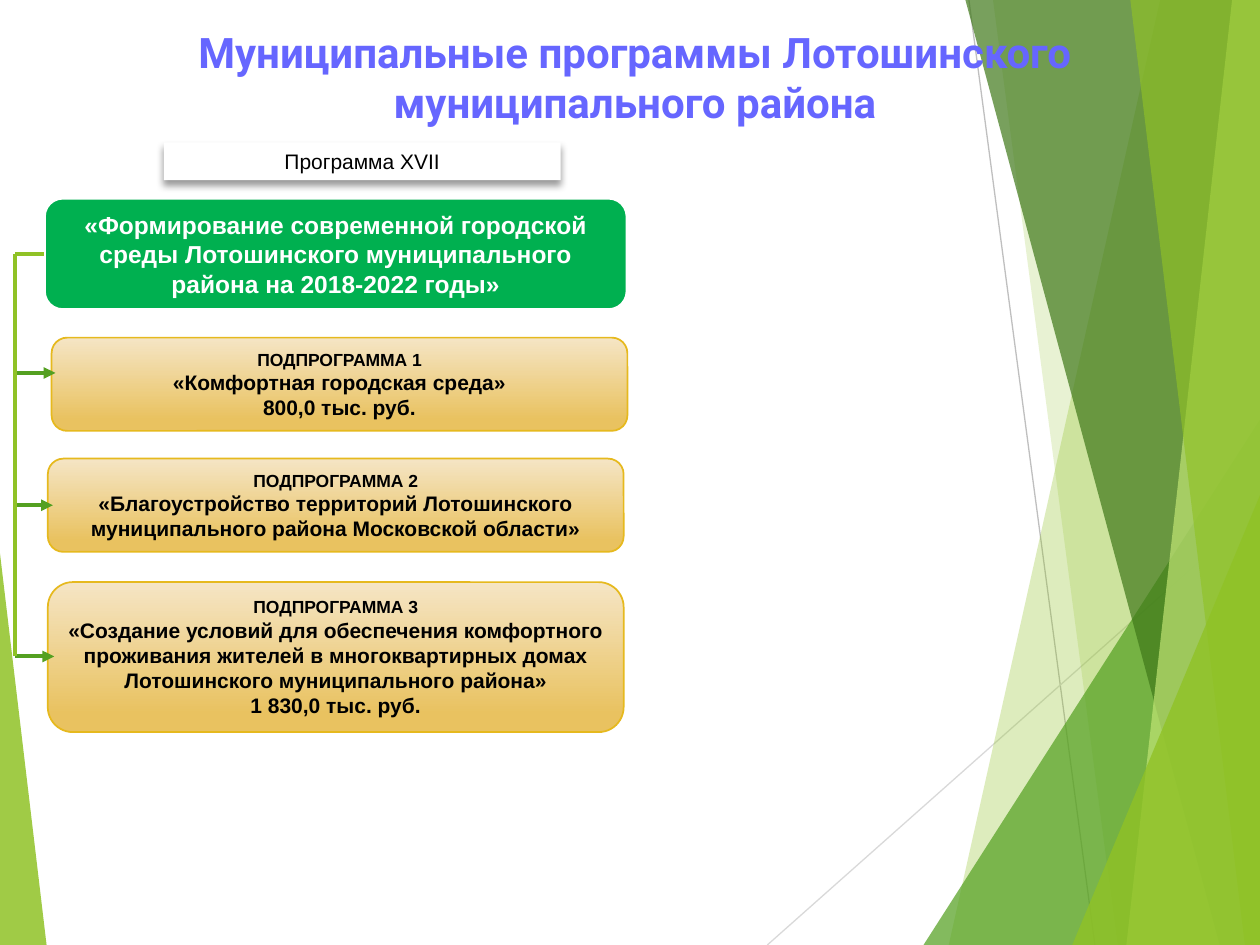
from dataclasses import dataclass
from lxml.etree import SubElement
from pptx import Presentation
from pptx.dml.color import RGBColor
from pptx.enum.shapes import MSO_CONNECTOR as Link, MSO_SHAPE as Shape
from pptx.enum.text import MSO_ANCHOR as Anchor, MSO_AUTO_SIZE as Fit, PP_ALIGN as Align
from pptx.oxml.ns import qn
from pptx.util import Inches, Pt


@dataclass(frozen=True)
class Theme:
    """Colours, fonts and type sizes of the slide."""
    lime: str = "90C226"
    green: str = "54A021"
    forest: str = "3F7819"
    pale: str = "C0E474"
    program: str = "00B050"
    gold: str = "E6B91E"
    sand: tuple = ((0, "F5E5C5"), (0.88, "E9C260"))
    title: str = "6666FF"
    white: str = "FFFFFF"
    black: str = "000000"
    title_font: str = "Roboto"
    body_font: str = "Arial"
    title_size: int = 24
    program_size: int = 14
    body_size: int = 12
    small_size: int = 10
    rule_width: float = 2.25


THEME = Theme()


def rgb(code):
    """Return the colour for a hex code."""
    return RGBColor.from_string(code)


def add_line(page, start, end, color, width, arrow=False):
    """Draw a straight line, with an optional arrowhead at its end."""
    line = page.shapes.add_connector(Link.STRAIGHT, *map(Inches, start + end))
    line.line.color.rgb = rgb(color)
    line.line.width = Pt(width)
    properties = line._element.spPr
    if arrow:
        SubElement(properties.find(qn("a:ln")), qn("a:tailEnd"), type="triangle")
    SubElement(properties, qn("a:effectLst"))
    return line


def paint(shape, color, opacity=100):
    """Give a shape a plain fill with no line or shadow."""
    shape.shadow.inherit = False
    shape.fill.solid()
    shape.fill.fore_color.rgb = rgb(color)
    shape.line.fill.background()
    if opacity < 100:
        tint = shape._element.spPr.find(qn("a:solidFill"))[0]
        SubElement(tint, qn("a:alpha"), val=str(opacity * 1000))


def write(shape, lines, font=THEME.body_font, color=THEME.black, bold=True, anchor=Anchor.MIDDLE):
    """Fill a shape with centred paragraphs given as text and size."""
    frame = shape.text_frame
    frame.word_wrap = True
    frame.vertical_anchor = anchor
    for index, (text, size) in enumerate(lines):
        para = frame.add_paragraph() if index else frame.paragraphs[0]
        para.alignment = Align.CENTER
        span = para.add_run()
        span.text = text
        span.font.color.rgb = rgb(color)
        for name, value in {"name": font, "size": Pt(size), "bold": bold}.items():
            setattr(span.font, name, value)


def add_band(page, box, top_x, bottom_x, color, opacity):
    """Draw a slanted band that reaches the right side of the box."""
    left, top, width, height = box
    right, bottom = left + width, top + height
    corners = [(right, top), (right, bottom), (bottom_x, bottom)]
    outline = page.shapes.build_freeform(Inches(top_x), Inches(top))
    outline.add_line_segments([tuple(map(Inches, corner)) for corner in corners])
    paint(outline.convert_to_shape(), color, opacity)


def add_corner(page, box, apex, color, opacity):
    """Draw a right triangle whose apex is at the given share of the width."""
    triangle = page.shapes.add_shape(Shape.ISOSCELES_TRIANGLE, *map(Inches, box))
    triangle.adjustments[0] = apex
    paint(triangle, color, opacity)


def add_backdrop(page, box):
    """Draw the green facets along the edges of the page."""
    left, top, width, height = box
    right, bottom = left + width, top + height
    bands = (left, top - 0.01, width, height + 0.01)
    add_line(page, (7.69, top), (8.69, bottom), "BFBFBF", 0.75)
    add_line(page, (right, 4.03), (6.09, bottom), "D9D9D9", 0.75)
    add_band(page, bands, 9.21, 7.53, THEME.lime, 30)
    add_band(page, bands, 7.88, 8.87, THEME.lime, 20)
    add_corner(page, (right - 2.67, bottom - 4.17, 2.67, 4.17), 1, THEME.green, 72)
    add_band(page, bands, 7.66, 9.68, THEME.forest, 70)
    add_band(page, bands, 9.78, 8.94, THEME.pale, 70)
    add_band(page, bands, 8.97, 9.88, THEME.lime, 65)
    add_corner(page, (right - 1.49, bottom - 3.57, 1.49, 3.57), 1, THEME.lime, 80)
    add_corner(page, (left, bottom - 3.11, 0.37, 3.11), 0, THEME.lime, 85)


def add_title(page, box):
    """Place the slide title."""
    title = page.shapes.add_textbox(*map(Inches, box))
    text = "Муниципальные программы Лотошинского муниципального района"
    write(title, [(text, THEME.title_size)], THEME.title_font, THEME.title, anchor=Anchor.TOP)


def add_label(page, box):
    """Place the shadowed programme number."""
    label = page.shapes.add_shape(Shape.RECTANGLE, *map(Inches, box))
    paint(label, THEME.white)
    effects = label._element.spPr.find(qn("a:effectLst"))
    shadow = SubElement(effects, qn("a:outerShdw"), blurRad=str(Pt(4)), dist=str(Pt(3)),
                        dir="5400000", algn="t", rotWithShape="0")
    tint = SubElement(shadow, qn("a:srgbClr"), val=THEME.black)
    SubElement(tint, qn("a:alpha"), val="40000")
    write(label, [("Программа XVII", THEME.body_size)], bold=False)
    label.text_frame.auto_size = Fit.SHAPE_TO_FIT_TEXT


def add_program(page, box):
    """Place the green programme name."""
    program = page.shapes.add_shape(Shape.ROUNDED_RECTANGLE, *map(Inches, box))
    paint(program, THEME.program)
    program.line.color.rgb = rgb(THEME.white)
    program.line.width = Pt(2)
    text = ("«Формирование современной городской среды Лотошинского "
            "муниципального района на 2018-2022 годы»")
    write(program, [(text, THEME.program_size)], color=THEME.white)
    program.text_frame.auto_size = Fit.SHAPE_TO_FIT_TEXT
    return program


def add_subprogram(page, box, number, details):
    """Place one golden subprogramme card."""
    card = page.shapes.add_shape(Shape.ROUNDED_RECTANGLE, *map(Inches, box))
    card.shadow.inherit = False
    card.fill.gradient()
    card.fill.gradient_angle = 270
    for stop, (position, color) in zip(card.fill.gradient_stops, THEME.sand):
        stop.position = position
        stop.color.rgb = rgb(color)
    card.line.color.rgb = rgb(THEME.gold)
    card.line.width = Pt(1)
    heading = (f"ПОДПРОГРАММА {number}", THEME.small_size)
    write(card, [heading] + [(text, THEME.body_size) for text in details])
    card.text_frame.auto_size = Fit.SHAPE_TO_FIT_TEXT


def add_tree(page, box):
    """Place the programme, its subprogrammes and the lines that join them."""
    left, top, width, height = box
    program = add_program(page, (left + 0.23, top, 4.63, 0.89))
    cards = [
        (0.29, 1.11, 0.74, 1.39, 0.32, ["«Комфортная городская среда»", "800,0 тыс. руб."]),
        (0.26, 2.07, 0.74, 2.44, 0.3,
         ["«Благоустройство территорий Лотошинского муниципального района Московской области»"]),
        (0.26, 3.05, 1.19, 3.64, 0.31,
         ["«Создание условий для обеспечения комфортного проживания жителей "
          "в многоквартирных домах Лотошинского муниципального района»", "1 830,0 тыс. руб."]),
    ]
    for number, (x, y, card_height, arrow_y, reach, details) in enumerate(cards, 1):
        add_subprogram(page, (left + x, top + y, 4.57, card_height), number, details)
        add_line(page, (left, top + arrow_y), (left + reach, top + arrow_y),
                 THEME.green, THEME.rule_width, True)
    middle = top + 0.445
    add_line(page, (left, middle), (left, top + height), THEME.lime, THEME.rule_width)
    stub = add_line(page, (left, middle), (left + 0.23, middle), THEME.lime, THEME.rule_width)
    stub.end_connect(program, 1)


def main():
    """Build and save the slide."""
    deck = Presentation()
    deck.slide_width, deck.slide_height = Inches(10), Inches(7.5)
    page = deck.slides.add_slide(deck.slide_layouts[6])
    add_backdrop(page, (0, 0, 10, 7.5))
    add_title(page, (0.47, 0.16, 9.14, 0.86))
    add_label(page, (1.3, 1.13, 3.15, 0.3))
    add_tree(page, (0.12, 1.57, 4.86, 3.64))
    deck.save("out.pptx")


if __name__ == "__main__":
    main()
